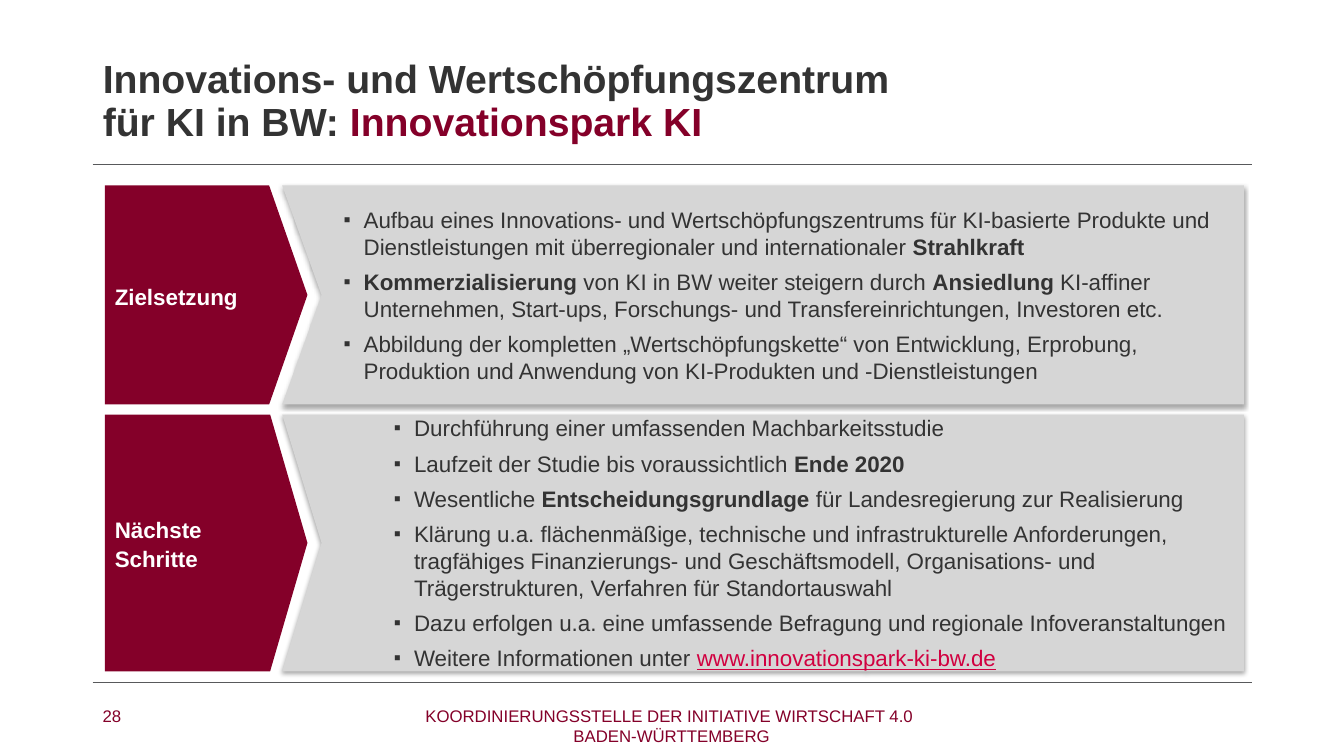
from pptx import Presentation
from pptx.dml.color import RGBColor
from pptx.enum.shapes import MSO_CONNECTOR, MSO_SHAPE
from pptx.enum.text import MSO_ANCHOR, MSO_AUTO_SIZE, PP_ALIGN
from pptx.oxml import parse_xml
from pptx.oxml.ns import nsdecls, qn
from pptx.util import Pt

STRAIGHT = MSO_CONNECTOR.STRAIGHT
PENTAGON = MSO_SHAPE.PENTAGON
MIDDLE = MSO_ANCHOR.MIDDLE
NO_AUTOFIT = MSO_AUTO_SIZE.NONE
LEFT, CENTER = PP_ALIGN.LEFT, PP_ALIGN.CENTER

DARK = RGBColor(0x33, 0x33, 0x33)
WINE = RGBColor(0x84, 0x00, 0x29)
PINK = RGBColor(0xD1, 0x00, 0x40)
GRAY = RGBColor(0xD6, 0xD6, 0xD6)
RULE = RGBColor(0x58, 0x59, 0x5B)
WHITE = RGBColor(0xFF, 0xFF, 0xFF)

SHADOW = (
    f'<a:outerShdw {nsdecls("a")} blurRad="39370" dist="22860" dir="5400000" rotWithShape="0">'
    '<a:srgbClr val="000000"><a:alpha val="35000"/></a:srgbClr></a:outerShdw>'
)
BULLET = (
    f'<a:buSzPct {nsdecls("a")} val="90000"/>',
    f'<a:buFont {nsdecls("a")} typeface="Arial"/>',
    f'<a:buChar {nsdecls("a")} char="▪"/>',
)

MARGIN, CONTENT_WIDTH = 66.25, 828
ARROW_LEFT, ARROW_WIDTH = 74.9, 144.7
PANEL_LEFT, PANEL_RIGHT, NOTCH = 201.6, 888.5, 28.1

# Each section: label, top, height, arrow tip, bullet indent, bullets (*bold*)
SECTIONS = [
    ("Zielsetzung", 132.5, 156.4, 0.189, 51.1, [
        "Aufbau eines Innovations- und Wertschöpfungszentrums für KI-basierte Produkte und \v"
        "Dienstleistungen mit überregionaler und internationaler *Strahlkraft*",
        "*Kommerzialisierung* von KI in BW weiter steigern durch *Ansiedlung* KI-affiner "
        "Unternehmen, Start-ups, Forschungs- und Transfereinrichtungen, Investoren etc.",
        "Abbildung der kompletten „Wertschöpfungskette“ von Entwicklung, Erprobung, "
        "Produktion und Anwendung von KI-Produkten und -Dienstleistungen",
    ]),
    ("Nächste Schritte", 296.1, 183.4, 0.184, 87.1, [
        "Durchführung einer umfassenden Machbarkeitsstudie",
        "Laufzeit der Studie bis voraussichtlich *Ende 2020*",
        "Wesentliche *Entscheidungsgrundlage* für Landesregierung zur Realisierung",
        "Klärung u.a. flächenmäßige, technische und infrastrukturelle Anforderungen, "
        "tragfähiges Finanzierungs- und Geschäftsmodell, Organisations- und "
        "Trägerstrukturen, Verfahren für Standortauswahl",
        "Dazu erfolgen u.a. eine umfassende Befragung und regionale Infoveranstaltungen",
        "Weitere Informationen unter *www.innovationspark-ki-bw.de*",
    ]),
]


def write(paragraph, text, size, color, bold=False):
    """Fill a paragraph; *marked* parts become bold. Returns the marked runs."""
    marked = []
    for part_index, part in enumerate(text.split("*")):
        for line_index, line in enumerate(part.split("\v")):
            if line_index:
                paragraph.add_line_break()
            if not line:
                continue
            run = paragraph.add_run()
            run.text = line
            run.font.name = "Arial"
            run.font.size = Pt(size)
            run.font.color.rgb = color
            run.font.bold = bold or part_index % 2 == 1
            if part_index % 2:
                marked.append(run)
    return marked


presentation = Presentation()
presentation.slide_width, presentation.slide_height = Pt(960), Pt(540)
slide = presentation.slides.add_slide(presentation.slide_layouts[5])
shapes = slide.shapes

# Title
title = shapes.title
title.left, title.top, title.width, title.height = Pt(MARGIN), Pt(28.8), Pt(CONTENT_WIDTH), Pt(88.6)
title.text_frame.auto_size = NO_AUTOFIT
title.text_frame.vertical_anchor = MIDDLE
paragraph = title.text_frame.paragraphs[0]
paragraph.alignment = LEFT
paragraph.line_spacing = 0.9
heading = "Innovations- und Wertschöpfungszentrum \vfür KI in BW: *Innovationspark KI*"
for run in write(paragraph, heading, 28, DARK, bold=True):
    run.font.color.rgb = WINE

# Rules above and below the content
for y in (117.4, 487.4):
    rule = shapes.add_connector(STRAIGHT, Pt(MARGIN), Pt(y), Pt(MARGIN + CONTENT_WIDTH), Pt(y))
    rule.line.color.rgb = RULE
    rule.line.width = Pt(0.5)
    rule._element.spPr.append(parse_xml(f'<a:effectLst {nsdecls("a")}/>'))

for label, top, height, tip, indent, bullets in SECTIONS:
    # Notched panel with bullets
    builder = shapes.build_freeform(Pt(PANEL_LEFT), Pt(top))
    builder.add_line_segments([
        (Pt(PANEL_RIGHT), Pt(top)),
        (Pt(PANEL_RIGHT), Pt(top + height)),
        (Pt(PANEL_LEFT), Pt(top + height)),
        (Pt(PANEL_LEFT + NOTCH), Pt(top + height / 2)),
    ])
    panel = builder.convert_to_shape()
    panel.fill.solid()
    panel.fill.fore_color.rgb = GRAY
    panel.line.fill.background()
    panel.shadow.inherit = False
    panel._element.spPr.find(qn("a:effectLst")).append(parse_xml(SHADOW))
    frame = panel.text_frame
    frame.word_wrap = True
    frame.vertical_anchor = MIDDLE
    for index, bullet in enumerate(bullets):
        paragraph = frame.add_paragraph() if index else frame.paragraphs[0]
        paragraph.alignment = LEFT
        paragraph.space_after = Pt(6)
        properties = paragraph._p.get_or_add_pPr()
        properties.set("marL", str(Pt(indent)))
        properties.set("indent", str(-Pt(14.4)))
        for element in BULLET:
            properties.append(parse_xml(element))
        for run in write(paragraph, bullet, 16, DARK):
            if run.text.startswith("www."):
                run.font.bold = False
                run.font.underline = True
                run.font.color.rgb = PINK

    # Arrow label
    arrow = shapes.add_shape(PENTAGON, Pt(ARROW_LEFT), Pt(top), Pt(ARROW_WIDTH), Pt(height))
    arrow.adjustments[0] = tip
    arrow.fill.solid()
    arrow.fill.fore_color.rgb = WINE
    arrow.line.fill.background()
    arrow.shadow.inherit = False
    frame = arrow.text_frame
    frame.word_wrap = True
    frame.vertical_anchor = MIDDLE
    frame.margin_left = frame.margin_right = Pt(7.2)
    frame.margin_top, frame.margin_bottom = Pt(6.5), Pt(5.8)
    paragraph = frame.paragraphs[0]
    paragraph.alignment = LEFT
    paragraph.line_spacing = 1.05
    write(paragraph, label, 16, WHITE, bold=True)

# Footer and page number
for left, width, alignment, text in (
    (296.6, 366.5, CENTER, "KOORDINIERUNGSSTELLE DER INITIATIVE WIRTSCHAFT 4.0 \vBADEN-WÜRTTEMBERG"),
    (MARGIN, 54.7, LEFT, "28"),
):
    box = shapes.add_textbox(Pt(left), Pt(500.4), Pt(width), Pt(28.8))
    box.text_frame.word_wrap = True
    paragraph = box.text_frame.paragraphs[0]
    paragraph.alignment = alignment
    write(paragraph, text, 12, WINE)

presentation.save("out.pptx")
